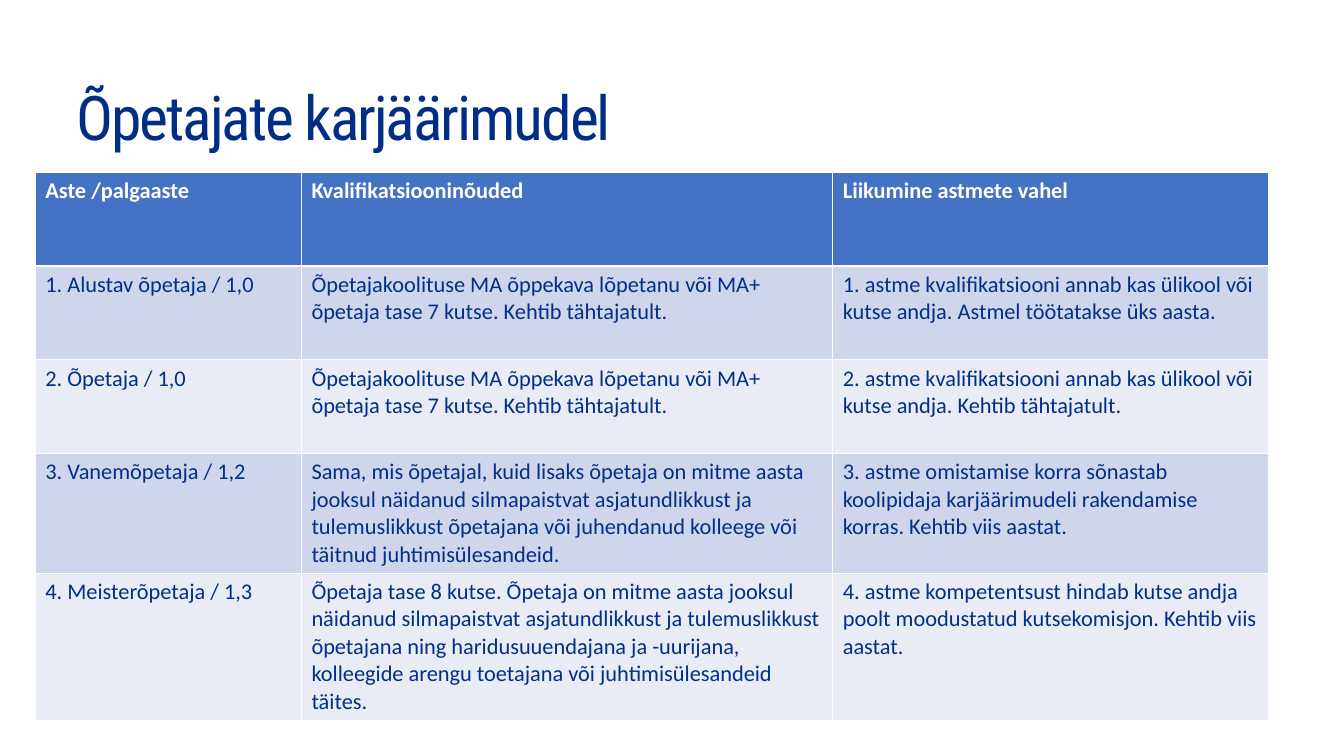
from dataclasses import dataclass

from pptx import Presentation
from pptx.dml.color import RGBColor
from pptx.enum.text import MSO_ANCHOR, MSO_AUTO_SIZE, PP_ALIGN
from pptx.util import Inches, Pt


@dataclass(frozen=True)
class Theme:
    title_font: str = "Roboto Condensed"
    body_font: str = "Calibri"
    title_size: int = 44
    table_size: int = 16
    title_spacing: float = -1.5
    title_color: str = "002E87"
    body_color: str = "003087"
    header_color: str = "FFFFFF"
    header_fill: str = "4472C4"
    band_fills: tuple = ("CFD5EA", "E9EBF5")


TITLE = "Õpetajate karjäärimudel"
COLUMN_WIDTHS = (2.64, 5.27, 4.32)
ROW_HEIGHT = 0.93
TEACHER_REQUIREMENTS = (
    "Õpetajakoolituse MA õppekava lõpetanu või MA+ õpetaja tase 7 kutse. "
    "Kehtib tähtajatult."
)
CAREER_ROWS = (
    ("Aste /palgaaste", "Kvalifikatsiooninõuded", "Liikumine astmete vahel"),
    (
        "1. Alustav õpetaja / 1,0",
        TEACHER_REQUIREMENTS,
        "1. astme kvalifikatsiooni annab kas ülikool või kutse andja. "
        "Astmel töötatakse üks aasta.",
    ),
    (
        "2. Õpetaja / 1,0",
        TEACHER_REQUIREMENTS,
        "2. astme kvalifikatsiooni annab kas ülikool või kutse andja. "
        "Kehtib tähtajatult.",
    ),
    (
        "3. Vanemõpetaja / 1,2",
        "Sama, mis õpetajal, kuid lisaks õpetaja on mitme aasta jooksul "
        "näidanud silmapaistvat asjatundlikkust ja tulemuslikkust õpetajana "
        "või juhendanud kolleege või täitnud juhtimisülesandeid.",
        "3. astme omistamise korra sõnastab koolipidaja karjäärimudeli "
        "rakendamise korras. Kehtib viis aastat.",
    ),
    (
        "4. Meisterõpetaja / 1,3",
        "Õpetaja tase 8 kutse. Õpetaja on mitme aasta jooksul näidanud "
        "silmapaistvat asjatundlikkust ja tulemuslikkust õpetajana ning "
        "haridusuuendajana ja -uurijana, kolleegide arengu toetajana või "
        "juhtimisülesandeid täites.",
        "4. astme kompetentsust hindab kutse andja poolt moodustatud "
        "kutsekomisjon. Kehtib viis aastat.",
    ),
)


class SlideBuilder:
    def __init__(self, slide, theme):
        self.slide = slide
        self.theme = theme

    def format_run(self, run, font_name, size, color, bold=False):
        run.font.name = font_name
        run.font.size = Pt(size)
        run.font.bold = bold
        run.font.color.rgb = RGBColor.from_string(color)

    def add_title(self, text, left, top, width, height):
        title = self.slide.shapes.title
        title.left, title.top = Inches(left), Inches(top)
        title.width, title.height = Inches(width), Inches(height)
        frame = title.text_frame
        frame.text = text
        frame.word_wrap = True
        frame.auto_size = MSO_AUTO_SIZE.NONE
        frame.vertical_anchor = MSO_ANCHOR.MIDDLE
        frame.margin_left = frame.margin_right = Inches(0)
        frame.margin_top = frame.margin_bottom = Inches(0)
        paragraph = frame.paragraphs[0]
        paragraph.alignment = PP_ALIGN.LEFT
        paragraph.line_spacing = 0.9
        run = paragraph.runs[0]
        theme = self.theme
        self.format_run(run, theme.title_font, theme.title_size, theme.title_color)
        run.font._element.set("spc", str(int(theme.title_spacing * 100)))

    def add_table(self, rows, left, top, column_widths, row_height):
        table = self.slide.shapes.add_table(
            len(rows), len(column_widths), Inches(left), Inches(top),
            Inches(sum(column_widths)), Inches(row_height * len(rows)),
        ).table
        for column, width in zip(table.columns, column_widths):
            column.width = Inches(width)
        for row_index, (row, texts) in enumerate(zip(table.rows, rows)):
            row.height = Inches(row_height)
            for cell, text in zip(row.cells, texts):
                self.fill_cell(cell, text, row_index)

    def fill_cell(self, cell, text, row_index):
        theme = self.theme
        is_header = row_index == 0
        bands = theme.band_fills
        fill = theme.header_fill if is_header else bands[(row_index - 1) % len(bands)]
        color = theme.header_color if is_header else theme.body_color
        cell.fill.solid()
        cell.fill.fore_color.rgb = RGBColor.from_string(fill)
        cell.text_frame.text = text
        run = cell.text_frame.paragraphs[0].runs[0]
        self.format_run(run, theme.body_font, theme.table_size, color, is_header)


def main():
    presentation = Presentation()
    presentation.slide_width = Inches(13.33)
    presentation.slide_height = Inches(7.5)
    title_only = presentation.slide_layouts.get_by_name("Title Only")
    slide = presentation.slides.add_slide(title_only)
    builder = SlideBuilder(slide, Theme())
    builder.add_title(TITLE, 0.76, 0.51, 8.89, 1.37)
    builder.add_table(CAREER_ROWS, 0.35, 1.71, COLUMN_WIDTHS, ROW_HEIGHT)
    presentation.save("out.pptx")


if __name__ == "__main__":
    main()
